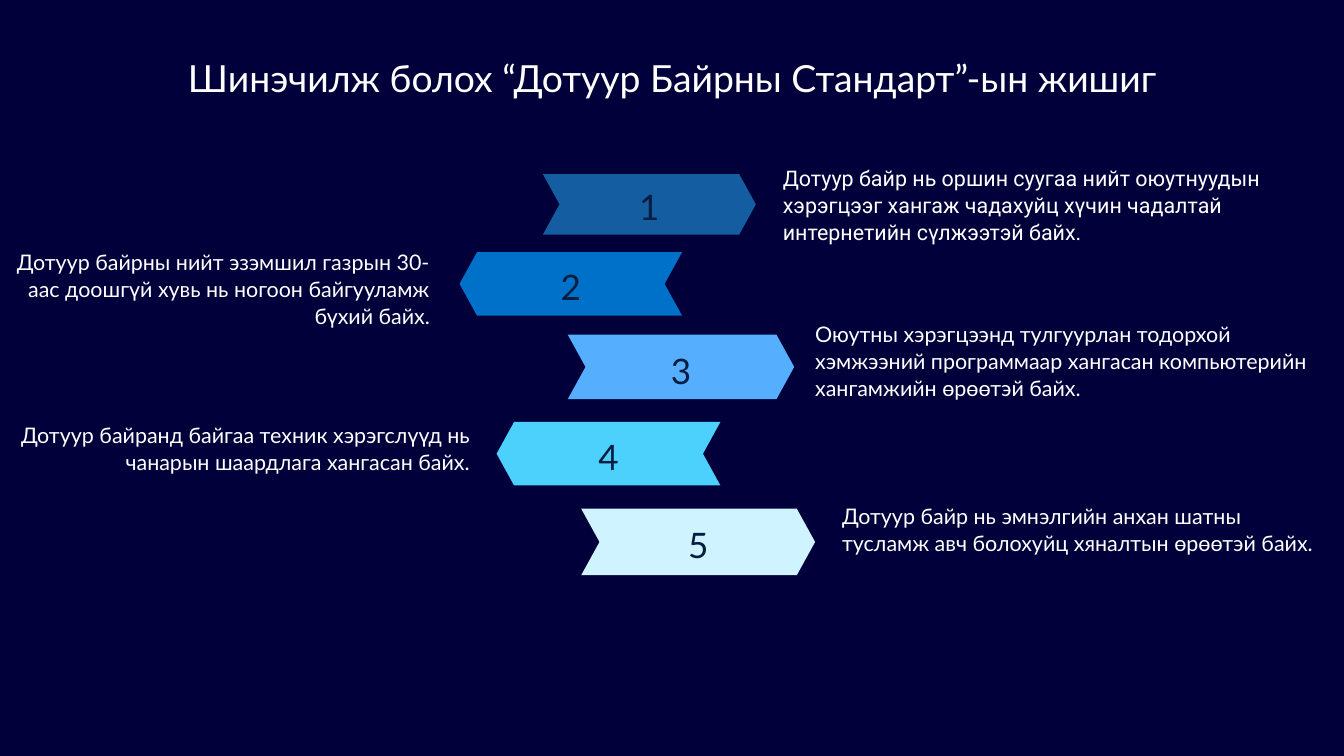
from dataclasses import dataclass

from pptx import Presentation
from pptx.dml.color import RGBColor
from pptx.enum.shapes import MSO_SHAPE
from pptx.enum.text import PP_ALIGN
from pptx.slide import Slide
from pptx.util import Cm, Pt


@dataclass(frozen=True)
class Theme:
    background: str = "01003B"
    light: str = "FFFFFF"
    dark: str = "051D40"
    font: str = "Lato"
    alternate_font: str = "Roboto"
    title_size: float = 40
    title_leading: float = 56
    number_size: float = 37.6
    number_leading: float = 51.9
    body_size: float = 23
    body_leading: float = 29


THEME = Theme()


@dataclass(frozen=True)
class Box:
    """A rectangle in centimetres."""
    left: float
    top: float
    width: float
    height: float


@dataclass(frozen=True)
class Standard:
    """One numbered requirement: its arrow, number and description."""
    arrow: Box
    color: str
    number_top: float
    description_box: Box
    description: str
    points_left: bool = False
    font: str = THEME.font


STANDARDS = [
    Standard(Box(20.52, 6.58, 8.05, 2.29), "145DA0", 6.76, Box(29.59, 6.2, 18.85, 3),
             "Дотуур байр нь оршин суугаа нийт оюутнуудын хэрэгцээг хангаж "
             "чадахуйц хүчин чадалтай интернетийн сүлжээтэй байх.",
             font=THEME.alternate_font),
    Standard(Box(17.37, 9.53, 8.41, 2.4), "0071C9", 9.8, Box(0, 9.37, 16.26, 3),
             "Дотуур байрны нийт эзэмшил газрын 30-аас доошгүй хувь нь "
             "ногоон байгууламж бүхий байх.", points_left=True),
    Standard(Box(21.46, 12.65, 8.56, 2.44), "56AEFF", 12.98, Box(30.81, 12.09, 18.85, 3),
             "Оюутны хэрэгцээнд тулгуурлан тодорхой хэмжээний программаар "
             "хангасан компьютерийн хангамжийн өрөөтэй байх."),
    Standard(Box(18.77, 15.95, 8.46, 2.4), "4BD1FB", 16.21, Box(0, 15.9, 17.78, 1.98),
             "Дотуур байранд байгаа техник хэрэгслүүд нь чанарын шаардлага "
             "хангасан байх.", points_left=True),
    Standard(Box(21.97, 19.23, 8.84, 2.51), "CFF4FF", 19.53, Box(31.83, 18.97, 18.31, 3),
             "Дотуур байр нь эмнэлгийн анхан шатны тусламж авч болохуйц "
             "хяналтын өрөөтэй байх."),
]

NUMBER_WIDTH, NUMBER_HEIGHT = 7.62, 1.75
POINT_DEPTH = 0.275  # share of the arrow's height


def add_text(slide: Slide, box: Box, text: str, size: float, leading: float,
             color: str, align: PP_ALIGN, font: str = THEME.font) -> None:
    frame = slide.shapes.add_textbox(
        Cm(box.left), Cm(box.top), Cm(box.width), Cm(box.height)).text_frame
    frame.word_wrap = True
    frame.margin_left = frame.margin_right = frame.margin_top = frame.margin_bottom = 0
    paragraph = frame.paragraphs[0]
    paragraph.alignment = align
    paragraph.line_spacing = Pt(leading)
    run = paragraph.add_run()
    run.text = text
    run.font.name = font
    run.font.size = Pt(size)
    run.font.color.rgb = RGBColor.from_string(color)


def add_arrow(slide: Slide, box: Box, color: str, points_left: bool) -> None:
    arrow = slide.shapes.add_shape(
        MSO_SHAPE.CHEVRON, Cm(box.left), Cm(box.top), Cm(box.width), Cm(box.height))
    arrow.adjustments[0] = POINT_DEPTH
    arrow.rotation = 180 if points_left else 0
    arrow.shadow.inherit = False
    arrow.fill.solid()
    arrow.fill.fore_color.rgb = RGBColor.from_string(color)
    arrow.line.fill.background()


def add_standard(slide: Slide, number: int, standard: Standard) -> None:
    arrow = standard.arrow
    add_arrow(slide, arrow, standard.color, standard.points_left)

    # The number is centred across its arrow
    number_left = arrow.left + (arrow.width - NUMBER_WIDTH) / 2
    add_text(slide, Box(number_left, standard.number_top, NUMBER_WIDTH, NUMBER_HEIGHT),
             str(number), THEME.number_size, THEME.number_leading,
             THEME.dark, PP_ALIGN.CENTER)

    # The description lines up against the arrow's point
    align = PP_ALIGN.RIGHT if standard.points_left else PP_ALIGN.LEFT
    add_text(slide, standard.description_box, standard.description, THEME.body_size,
             THEME.body_leading, THEME.light, align, standard.font)


def main() -> None:
    presentation = Presentation()
    presentation.slide_width = Cm(50.8)
    presentation.slide_height = Cm(28.575)
    slide = presentation.slides.add_slide(presentation.slide_layouts[6])

    # Background
    slide.background.fill.solid()
    slide.background.fill.fore_color.rgb = RGBColor.from_string(THEME.background)

    # Title
    add_text(slide, Box(5.77, 1.8, 39.27, 1.88),
             "Шинэчилж болох “Дотуур Байрны Стандарт”-ын жишиг",
             THEME.title_size, THEME.title_leading, THEME.light, PP_ALIGN.CENTER)

    # Numbered standards
    for number, standard in enumerate(STANDARDS, start=1):
        add_standard(slide, number, standard)

    presentation.save("out.pptx")


if __name__ == "__main__":
    main()
